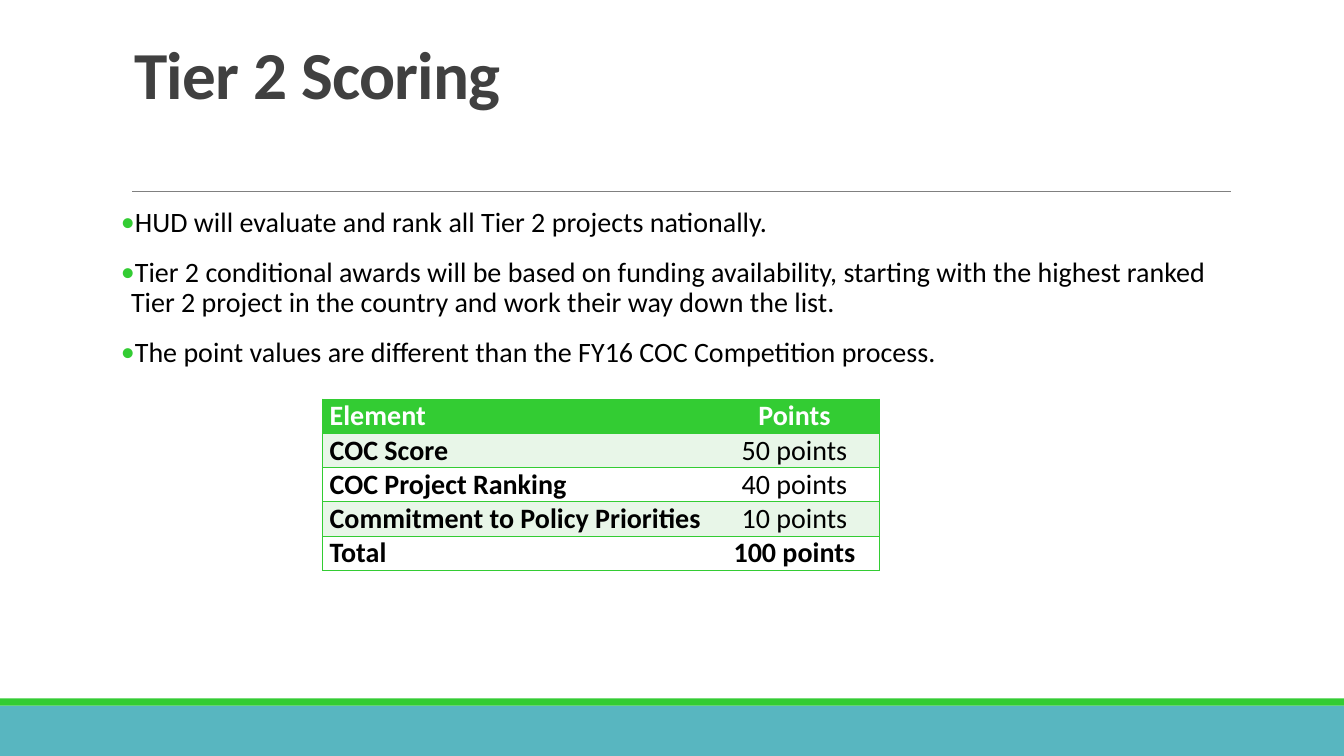
import pptx
import pptx.dml.color
import pptx.enum.shapes
import pptx.enum.text
import pptx.oxml.ns
import pptx.util
from lxml import etree

Inches = pptx.util.Inches
Pt = pptx.util.Pt
RGBColor = pptx.dml.color.RGBColor
qn = pptx.oxml.ns.qn

GREEN = RGBColor(0x33, 0xCC, 0x33)
TEAL = RGBColor(0x58, 0xB6, 0xC0)
GRAY = RGBColor(0x80, 0x80, 0x80)
DARK = RGBColor(0x40, 0x40, 0x40)
PALE = RGBColor(0xE8, 0xF6, 0xE8)
BLACK = RGBColor(0, 0, 0)
WHITE = RGBColor(0xFF, 0xFF, 0xFF)

TITLE = "Tier 2 Scoring"
BULLETS = [
    "HUD will evaluate and rank all Tier 2 projects nationally.",
    "Tier 2 conditional awards will be based on funding availability, starting with the "
    "highest ranked Tier 2 project in the country and work their way down the list.",
    "The point values are different than the FY16 COC Competition process.",
]
SCORES = [
    ("Element", "Points"),
    ("COC Score", "50 points"),
    ("COC Project Ranking", "40 points"),
    ("Commitment to Policy Priorities", "10 points"),
    ("Total", "100 points"),
]
BANDS = [(7, 0.5, TEAL), (6.93, 0.07, GREEN)]
COL_WIDTHS = (3.84, 1.68)
ROW_HEIGHT = 0.34

TITLE_FONT = {"name": "Calibri", "size": Pt(48), "bold": True}
BODY_FONT = {"name": "Calibri", "size": Pt(20), "bold": False}
TITLE_FRAME = {"word_wrap": True, "margin_left": Inches(0.13), "margin_right": Inches(0.13),
               "margin_top": Inches(0.13), "margin_bottom": Inches(0.13)}
BODY_FRAME = {"word_wrap": True, "margin_left": 0, "margin_right": 0,
              "margin_top": Inches(0.05), "margin_bottom": Inches(0.05)}
CELL_FRAME = {"margin_left": Inches(0.07), "margin_right": Inches(0.07),
              "margin_top": 0, "margin_bottom": 0}


def apply(obj, values):
    for name, value in values.items():
        setattr(obj, name, value)


def style_font(font, values, color):
    apply(font, values)
    font.color.rgb = color


def add_text_box(s, top, height, frame):
    tf = s.shapes.add_textbox(Inches(1.2), Inches(top), Inches(11), Inches(height)).text_frame
    apply(tf, frame)
    return tf


def add_bullet(p):
    pPr = p._p.get_or_add_pPr()
    pPr.set("marL", str(Inches(0.1)))
    pPr.set("indent", str(-Inches(0.1)))
    color = etree.SubElement(pPr, qn("a:buClr"))
    etree.SubElement(color, qn("a:srgbClr"), val=str(GREEN))
    etree.SubElement(pPr, qn("a:buFont"), typeface="Calibri")
    etree.SubElement(pPr, qn("a:buChar"), char="•")


def add_borders(cell, open_side):
    tcPr = cell._tc.get_or_add_tcPr()
    for side in ("lnL", "lnR", "lnT", "lnB"):
        ln = etree.SubElement(tcPr, qn("a:" + side), w=str(Pt(1)))
        if side == open_side:
            etree.SubElement(ln, qn("a:noFill"))
        else:
            fill = etree.SubElement(ln, qn("a:solidFill"))
            etree.SubElement(fill, qn("a:srgbClr"), val=str(GREEN))


def add_frame(prs, s):
    for top, height, color in BANDS:
        sp = s.shapes.add_shape(pptx.enum.shapes.MSO_SHAPE.RECTANGLE, 0, Inches(top),
                                prs.slide_width, Inches(height))
        sp.shadow.inherit = False
        sp.fill.solid()
        sp.fill.fore_color.rgb = color
        sp.line.fill.background()
    rule = s.shapes.add_connector(pptx.enum.shapes.MSO_CONNECTOR.STRAIGHT,
                                  Inches(1.31), Inches(1.9), Inches(12.21), Inches(1.9))
    rule.line.color.rgb = GRAY
    rule.line.width = Pt(0.5)
    etree.SubElement(rule._element.spPr, qn("a:effectLst"))


def add_title(s):
    p = add_text_box(s, 0.31, 1.59, TITLE_FRAME).paragraphs[0]
    p.line_spacing = 0.85
    r = p.add_run()
    r.text = TITLE
    style_font(r.font, TITLE_FONT, DARK)
    r._r.get_or_add_rPr().set("spc", "-50")


def add_bullets(s):
    tf = add_text_box(s, 2.02, 4.4, BODY_FRAME)
    for i, text in enumerate(BULLETS):
        p = tf.add_paragraph() if i else tf.paragraphs[0]
        add_bullet(p)
        apply(p, {"line_spacing": 0.9, "space_before": Pt(12 if i else 0), "space_after": Pt(2)})
        r = p.add_run()
        r.text = text
        style_font(r.font, BODY_FONT, BLACK)


def add_scores(s):
    table = s.shapes.add_table(len(SCORES), len(COL_WIDTHS), Inches(3.2), Inches(3.96),
                               Inches(sum(COL_WIDTHS)), Inches(ROW_HEIGHT * len(SCORES))).table
    apply(table, {"first_row": True, "horz_banding": False})
    for column, width in zip(table.columns, COL_WIDTHS):
        column.width = Inches(width)
    for i, row in enumerate(SCORES):
        table.rows[i].height = Inches(ROW_HEIGHT)
        for j, text in enumerate(row):
            cell = table.cell(i, j)
            apply(cell, CELL_FRAME)
            add_borders(cell, "lnL" if j else "lnR")
            cell.fill.solid()
            cell.fill.fore_color.rgb = GREEN if i == 0 else PALE if i % 2 else WHITE
            p = cell.text_frame.paragraphs[0]
            if j:
                p.alignment = pptx.enum.text.PP_ALIGN.CENTER
            r = p.add_run()
            r.text = text
            style_font(r.font, BODY_FONT, BLACK if i else WHITE)
            r.font.bold = j == 0 or i in (0, len(SCORES) - 1)


def main():
    prs = pptx.Presentation()
    prs.slide_width, prs.slide_height = Inches(13.33), Inches(7.5)
    s = prs.slides.add_slide(prs.slide_layouts[6])
    add_frame(prs, s)
    add_title(s)
    add_bullets(s)
    add_scores(s)
    prs.save("out.pptx")


if __name__ == "__main__":
    main()
